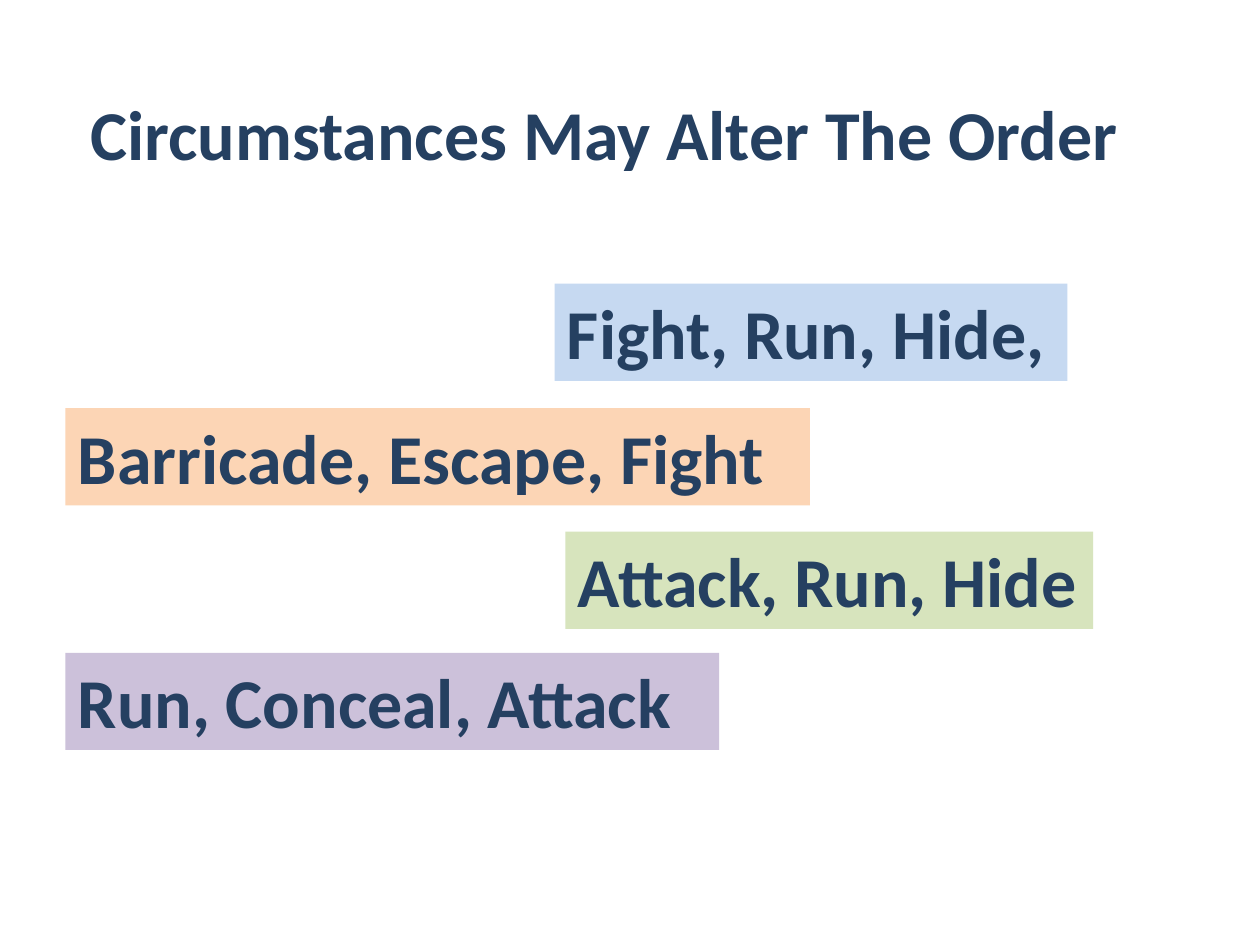
from pptx import Presentation
from pptx.dml.color import RGBColor
from pptx.enum.shapes import MSO_SHAPE as Shape
from pptx.enum.text import MSO_ANCHOR as Anchor, MSO_AUTO_SIZE as AutoSize, PP_ALIGN as Align
from pptx.util import Cm, Pt

BOX_HEIGHT = 1.96
NAVY = "254061"
SEQUENCES = [
    ("Fight, Run, Hide,", 11.18, 5.72, 10.34, "C6D9F1"),
    ("Barricade, Escape, Fight", 1.32, 8.23, 15.01, "FCD5B5"),
    ("Attack, Run, Hide", 11.4, 10.72, 10.64, "D7E4BD"),
    ("Run, Conceal, Attack", 1.32, 13.16, 13.18, "CCC1DA"),
]


def color(value):
    """Turn a hex string into a colour."""
    return RGBColor.from_string(value)


def apply_format(target, values):
    """Set each named attribute on the target."""
    for name, value in values.items():
        setattr(target, name, value)


def write_text(box, text):
    """Fill a box with one bold, left-aligned line."""
    frame = box.text_frame
    frame.text = text
    apply_format(frame, {
        "word_wrap": True,
        "auto_size": AutoSize.SHAPE_TO_FIT_TEXT,
        "vertical_anchor": Anchor.TOP,
    })
    para = frame.paragraphs[0]
    para.alignment = Align.LEFT
    span = para.runs[0]
    apply_format(span.font, {"name": "Calibri", "size": Pt(40), "bold": True})
    span.font.color.rgb = color(NAVY)


def set_title(page, text, left, top, width):
    """Place and format the slide title."""
    title = page.shapes.title
    apply_format(title, {
        "left": Cm(left), "top": Cm(top),
        "width": Cm(width), "height": Cm(BOX_HEIGHT),
    })
    write_text(title, text)


def add_sequence(page, text, left, top, width, fill):
    """Add a coloured box naming one order of actions."""
    box = page.shapes.add_shape(
        Shape.RECTANGLE, Cm(left), Cm(top), Cm(width), Cm(BOX_HEIGHT))
    box.shadow.inherit = False
    box.fill.solid()
    box.fill.fore_color.rgb = color(fill)
    box.line.fill.background()
    write_text(box, text)


def main():
    """Build and save the deck."""
    deck = Presentation()
    apply_format(deck, {"slide_width": Cm(25.4), "slide_height": Cm(19.05)})
    page = deck.slides.add_slide(deck.slide_layouts.get_by_name("Title Only"))
    set_title(page, "Circumstances May Alter The Order", 1.57, 1.7, 21.74)
    for sequence in SEQUENCES:
        add_sequence(page, *sequence)
    deck.save("out.pptx")


if __name__ == "__main__":
    main()
